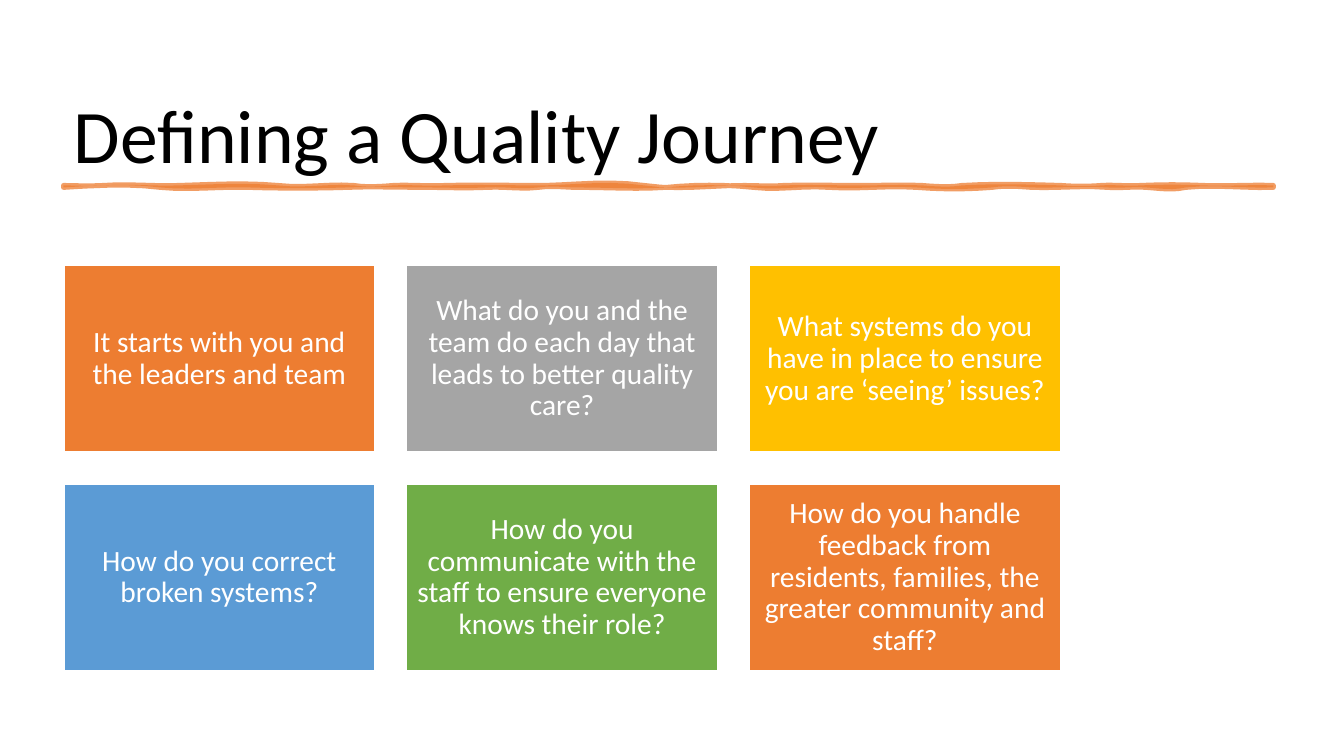
from pptx import Presentation
from pptx.dml.color import RGBColor
from pptx.enum.shapes import MSO_SHAPE
from pptx.enum.text import MSO_ANCHOR, MSO_AUTO_SIZE, PP_ALIGN
from pptx.oxml.ns import qn
from pptx.util import Inches, Pt

RECTANGLE = MSO_SHAPE.RECTANGLE
MIDDLE, BOTTOM = MSO_ANCHOR.MIDDLE, MSO_ANCHOR.BOTTOM
LEFT, CENTER = PP_ALIGN.LEFT, PP_ALIGN.CENTER
NO_AUTOFIT = MSO_AUTO_SIZE.NONE

COLORS = {
    "black": "000000", "white": "FFFFFF", "orange": "ED7D31", "gray": "A5A5A5",
    "gold": "FFC000", "blue": "5B9BD5", "green": "70AD47",
}

CARDS = [
    ("It starts with you and the leaders and team", "orange"),
    ("What do you and the team do each day that leads to better quality care?", "gray"),
    ("What systems do you have in place to ensure you are ‘seeing’ issues?", "gold"),
    ("How do you correct broken systems?", "blue"),
    ("How do you communicate with the staff to ensure everyone knows their role?", "green"),
    ("How do you handle feedback from residents, families, the greater community and staff?",
     "orange"),
]
CARD_COLUMNS = 3

# Each wave: end x in inches, then its two bends in hundredths of an inch.
RULE_LEFT, RULE_RIGHT = 0.63, 12.63
RULE_TOP, RULE_BOTTOM = 1.84, 1.86
TOP_WAVES = [
    (1.02, 0, 1), (1.77, -2, 1), (2.76, -1, -3), (3.51, 3, -2), (3.9, 2, 1),
    (4.41, -1, 1), (5.4, -1, 0), (6.39, -1, -5), (7.38, 5, 0), (7.77, 0, 1),
    (8.52, -1, 0), (9.15, 0, -1), (9.54, 1, 2), (10.53, -2, -1), (10.92, 1, 1),
    (11.31, -1, 1), (11.94, -1, -1), (RULE_RIGHT, 1, -1),
]
BOTTOM_WAVES = [
    (11.76, 1, -3), (11.37, 3, 1), (10.98, -1, 1), (10.23, -2, 1), (9.84, -1, -2),
    (9.09, 2, 2), (8.22, -2, 2), (7.47, -2, 3), (6.6, -3, -3), (5.73, 2, 0),
    (5.34, 0, -2), (4.83, 2, -1), (4.2, 1, 0), (3.45, 0, -1), (2.46, 1, 1),
    (1.59, -1, 3), (RULE_LEFT, -4, -2),
]


def color(name):
    return RGBColor.from_string(COLORS[name])


def write_text(frame, text, *, size, fill, font="Calibri", align=LEFT,
               anchor=MIDDLE, inset=None):
    frame.word_wrap = True
    frame.auto_size = NO_AUTOFIT
    frame.vertical_anchor = anchor
    if inset is not None:
        frame.margin_left = frame.margin_right = Inches(inset)
        frame.margin_top = frame.margin_bottom = Inches(inset)
    paragraph = frame.paragraphs[0]
    paragraph.alignment = align
    paragraph.line_spacing = 0.9
    run = paragraph.add_run()
    run.text = text
    run.font.name = font
    run.font.size = Pt(size)
    run.font.color.rgb = color(fill)


def wave_points(start, base, waves, steps=6):
    """Points along a chain of cubic curves that return to the base height."""
    points = [(start, base)]
    for end, first, second in waves:
        for step in range(1, steps + 1):
            t = step / steps
            rise = 3 * t * (1 - t) * ((1 - t) * first + t * second) / 100
            points.append((start + (end - start) * t, base + rise))
        start = end
    return points


class SlideBuilder:
    margin, top = 0.63, 2.63
    column_pitch, row_pitch = 3.4, 2.17
    card_width, card_height = 3.09, 1.86

    def __init__(self, presentation):
        self.slide = presentation.slides.add_slide(presentation.slide_layouts[5])

    def title(self, text):
        title = self.slide.shapes.title
        title.left, title.top = Inches(self.margin), Inches(0.26)
        title.width, title.height = Inches(12.05), Inches(1.57)
        write_text(title.text_frame, text, size=54, fill="black", anchor=BOTTOM)

    def style(self, shape, fill, line, width, opacity=None):
        shape.shadow.inherit = False
        shape.fill.solid()
        shape.fill.fore_color.rgb = color(fill)
        shape.line.color.rgb = color(line)
        shape.line.width = Pt(width)
        if opacity is not None:
            for tint in shape.fill._xPr.iter(qn("a:srgbClr")):
                alpha = tint.makeelement(qn("a:alpha"), {"val": str(opacity * 1000)})
                tint.append(alpha)

    def brush_rule(self):
        points = wave_points(RULE_LEFT, RULE_TOP, TOP_WAVES)
        points += wave_points(RULE_RIGHT, RULE_BOTTOM, BOTTOM_WAVES)
        outline = [(Inches(x), Inches(y)) for x, y in points]
        builder = self.slide.shapes.build_freeform(*outline[0])
        builder.add_line_segments(outline[1:], close=True)
        self.style(builder.convert_to_shape(), "orange", "orange", 3.5, opacity=75)

    def card(self, column, row, text, fill):
        shape = self.slide.shapes.add_shape(
            RECTANGLE,
            Inches(self.margin + column * self.column_pitch),
            Inches(self.top + row * self.row_pitch),
            Inches(self.card_width), Inches(self.card_height))
        self.style(shape, fill, "white", 1.5)
        write_text(shape.text_frame, text, size=21, fill="white", align=CENTER, inset=0.09)


def main():
    presentation = Presentation()
    presentation.slide_width, presentation.slide_height = Inches(13.33), Inches(7.5)
    builder = SlideBuilder(presentation)
    builder.title("Defining a Quality Journey")
    builder.brush_rule()
    for index, (text, fill) in enumerate(CARDS):
        row, column = divmod(index, CARD_COLUMNS)
        builder.card(column, row, text, fill)
    presentation.save("out.pptx")


if __name__ == "__main__":
    main()
